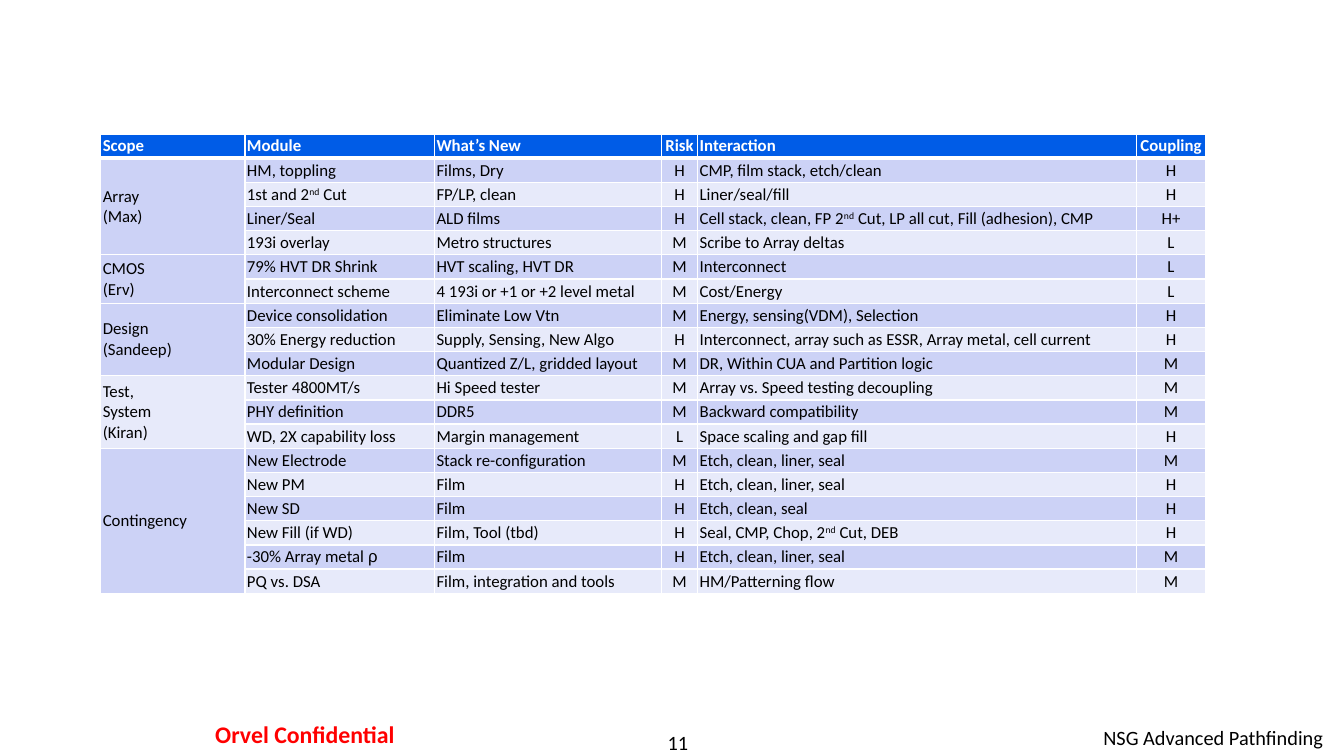
"""Build the slide with the module risk and coupling table."""
from lxml.etree import SubElement
from pptx import Presentation
from pptx.dml.color import RGBColor
from pptx.enum.text import MSO_ANCHOR as Anchor, PP_ALIGN as Align
from pptx.oxml.ns import qn
from pptx.util import Inches, Pt

COLORS = {"header": "005CE7", "odd": "CCD2F6", "even": "E7EAFA",
          "border": "FFFFFF", "light": "FFFFFF", "dark": "000000", "alert": "FF0000"}

HEADERS = ("Scope", "Module", "What’s New", "Risk", "Interaction", "Coupling")
COLUMN_WIDTHS = (1.43, 1.88, 2.25, 0.36, 4.35, 0.69)
CENTERED_COLUMNS = (3, 5)
ROW_HEIGHT = 0.24
CELL_MARGIN = 0.02

SCOPES = [
    ("Array\n(Max)", [
        ("HM, toppling", "Films, Dry", "H", "CMP, film stack, etch/clean", "H"),
        ("1st and 2^nd^ Cut", "FP/LP, clean", "H", "Liner/seal/fill", "H"),
        ("Liner/Seal", "ALD films", "H",
         "Cell stack, clean, FP 2^nd^ Cut, LP all cut, Fill (adhesion), CMP", "H+"),
        ("193i overlay", "Metro structures", "M", "Scribe to Array deltas", "L"),
    ]),
    ("CMOS\n(Erv)", [
        ("79% HVT DR Shrink", "HVT scaling, HVT DR", "M", "Interconnect", "L"),
        ("Interconnect scheme", "4 193i or +1 or +2 level metal", "M", "Cost/Energy", "L"),
    ]),
    ("Design\n(Sandeep)", [
        ("Device consolidation", "Eliminate Low Vtn", "M",
         "Energy, sensing(VDM), Selection", "H"),
        ("30% Energy reduction", "Supply, Sensing, New Algo", "H",
         "Interconnect, array such as ESSR, Array metal, cell current", "H"),
        ("Modular Design", "Quantized Z/L, gridded layout", "M",
         "DR, Within CUA and Partition logic", "M"),
    ]),
    ("Test,\nSystem\n(Kiran)", [
        ("Tester 4800MT/s", "Hi Speed tester", "M", "Array vs. Speed testing decoupling", "M"),
        ("PHY definition", "DDR5", "M", "Backward compatibility", "M"),
        ("WD, 2X capability loss", "Margin management", "L", "Space scaling and gap fill", "H"),
    ]),
    ("Contingency", [
        ("New Electrode", "Stack re-configuration", "M", "Etch, clean, liner, seal", "M"),
        ("New PM", "Film", "H", "Etch, clean, liner, seal", "H"),
        ("New SD", "Film", "H", "Etch, clean, seal", "H"),
        ("New Fill (if WD)", "Film, Tool (tbd)", "H", "Seal, CMP, Chop, 2^nd^ Cut, DEB", "H"),
        ("-30% Array metal ^ρ", "Film", "H", "Etch, clean, liner, seal", "M"),
        ("PQ vs. DSA", "Film, integration and tools", "M", "HM/Patterning flow", "M"),
    ]),
]

FOOTERS = [
    ("11", (5.56, 7.24, 2.33, 0.24), (0, 0), Align.CENTER, 14.5, "dark", False),
    ("NSG Advanced Pathfinding", (8.83, 7.15, 4.39, 0.35), (0.1, 0.05),
     Align.RIGHT, 14.5, "dark", False),
    ("Orvel Confidential", (1.55, 7.08, 2.95, 0.41), (0.12, 0.06),
     Align.CENTER, 17, "alert", True),
]


def write(frame, text, size, color, bold, align):
    """Fill a text frame; carets set off ordinal suffixes and Greek letters."""
    for number, line in enumerate(text.split("\n")):
        paragraph = frame.paragraphs[0] if number == 0 else frame.add_paragraph()
        paragraph.alignment = align
        for piece in line.split("^"):
            run = paragraph.add_run()
            run.text = piece
            run.font.name = "Arial" if piece == "ρ" else "Calibri"
            run.font.size = Pt(size)
            run.font.bold = bold
            run.font.color.rgb = RGBColor.from_string(COLORS[color])
            if piece == "nd":
                run.font._element.set("baseline", "30000")


def style_cell(cell, row, fill):
    """Set the margins, anchor, borders and fill of a cell."""
    cell.margin_left = cell.margin_right = Inches(CELL_MARGIN)
    cell.margin_top = cell.margin_bottom = Inches(CELL_MARGIN)
    cell.vertical_anchor = Anchor.MIDDLE
    heavy_side = {0: "lnB", 1: "lnT"}.get(row)
    for side in ("lnL", "lnR", "lnT", "lnB"):
        width = Pt(3 if side == heavy_side else 1)
        border = SubElement(cell._tc.get_or_add_tcPr(), qn(f"a:{side}"), w=str(width))
        solid = SubElement(border, qn("a:solidFill"))
        SubElement(solid, qn("a:srgbClr"), val=COLORS["border"])
    cell.fill.solid()
    cell.fill.fore_color.rgb = RGBColor.from_string(COLORS[fill])


def add_scope_table(slide):
    """Add the table with one merged scope cell per group of modules."""
    rows = [HEADERS]
    for scope, modules in SCOPES:
        rows += [(scope if i == 0 else "", *module) for i, module in enumerate(modules)]
    table = slide.shapes.add_table(
        len(rows), len(HEADERS), Inches(1), Inches(1.33),
        Inches(sum(COLUMN_WIDTHS)), Inches(ROW_HEIGHT * len(rows))).table
    for column, width in zip(table.columns, COLUMN_WIDTHS):
        column.width = Inches(width)
    for r, values in enumerate(rows):
        table.rows[r].height = Inches(ROW_HEIGHT)
        fill = "header" if r == 0 else ("even", "odd")[r % 2]
        for c, value in enumerate(values):
            cell = table.cell(r, c)
            style_cell(cell, r, fill)
            if value:
                align = Align.CENTER if c in CENTERED_COLUMNS else Align.LEFT
                write(cell.text_frame, value, 12, "dark" if r else "light", r == 0, align)
    top = 1
    for _, modules in SCOPES:
        bottom = top + len(modules) - 1
        table.cell(top, 0).merge(table.cell(bottom, 0))
        top = bottom + 1


def add_footer(slide, text, place, margins, align, size, color, bold):
    """Add one text of the footer line."""
    frame = slide.shapes.add_textbox(*map(Inches, place)).text_frame
    frame.word_wrap = True
    frame.margin_left = frame.margin_right = Inches(margins[0])
    frame.margin_top = frame.margin_bottom = Inches(margins[1])
    write(frame, text, size, color, bold, align)


def main():
    """Build and save the slide."""
    deck = Presentation()
    deck.slide_width, deck.slide_height = Inches(13.33), Inches(7.5)
    slide = deck.slides.add_slide(deck.slide_layouts.get_by_name("Blank"))
    for footer in FOOTERS:
        add_footer(slide, *footer)
    add_scope_table(slide)
    deck.save("out.pptx")


if __name__ == "__main__":
    main()
